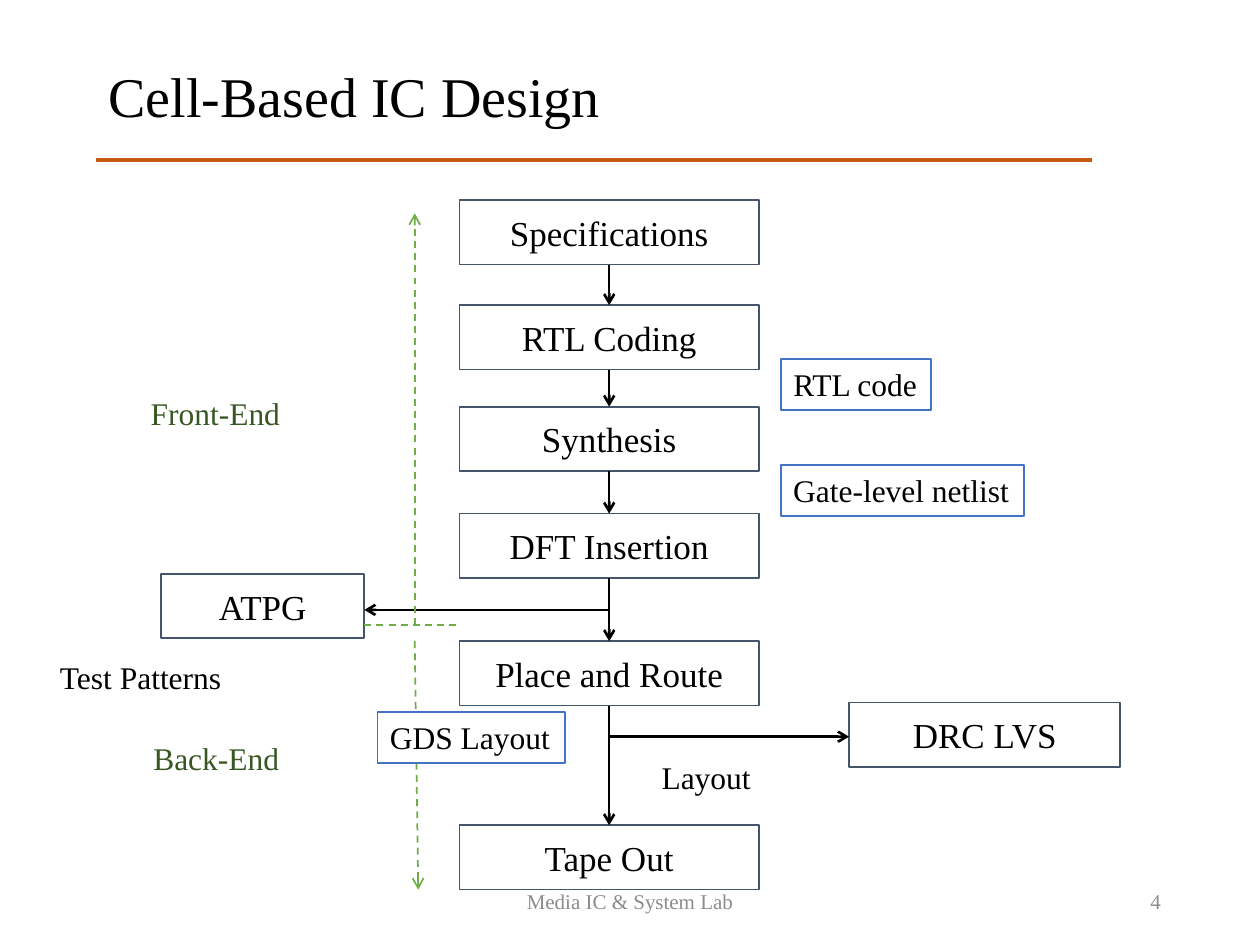
from dataclasses import dataclass

from lxml import etree
from pptx import Presentation
from pptx.dml.color import RGBColor
from pptx.enum import dml, shapes, text
from pptx.oxml import ns
from pptx.util import Pt


@dataclass(frozen=True)
class Theme:
    font: str = "Times New Roman"
    black: str = "000000"
    white: str = "FFFFFF"
    grey: str = "8C8C8C"
    slate: str = "44546A"
    blue: str = "4472C4"
    green: str = "70AD47"
    forest: str = "385723"
    rust: str = "C55A11"
    head: int = 32
    step: int = 20
    note: int = 18
    foot: int = 12


T = Theme()
LEFT, WIDTH, HIGH = 262.6, 171, 36.8
MID = LEFT + WIDTH / 2
STEPS = [
    ("Specifications", 114.4),
    ("RTL Coding", 174.4),
    ("Synthesis", 232.4),
    ("DFT Insertion", 293.5),
    ("Place and Route", 366.4),
    ("Tape Out", 471.6),
]
SIDES = [("ATPG", 92, 328, 116.2), ("DRC LVS", 485.2, 401.4, 155)]
FILES = [
    ("RTL code", 446.2, 205.2, 85.8),
    ("Gate-level netlist", 446.2, 265.8, 139),
    ("GDS Layout", 215.7, 407, 107),
]
LABELS = [
    ("Front-End", 79, 221.8, 89.2, T.forest),
    ("Back-End", 80.5, 419, 87, T.forest),
    ("Test Patterns", 27.2, 372.6, 108, T.black),
    ("Layout", 371, 429.8, 66, T.black),
]
ALIGN = text.PP_ALIGN
ANCHOR = text.MSO_ANCHOR


def rgb(code):
    return RGBColor.from_string(code)


def write(shape, words, size, color=T.black, align=ALIGN.LEFT,
          anchor=ANCHOR.TOP, wrap=False, grow=False):
    frame = shape.text_frame
    frame.word_wrap = wrap
    frame.vertical_anchor = anchor
    frame.auto_size = (text.MSO_AUTO_SIZE.SHAPE_TO_FIT_TEXT if grow
                       else text.MSO_AUTO_SIZE.NONE)
    para = frame.paragraphs[0]
    para.alignment = align
    run = para.add_run()
    run.text = words
    run.font.name = T.font
    run.font.size = Pt(size)
    run.font.color.rgb = rgb(color)


def add_title(slide, words):
    title = slide.shapes.title
    title.left, title.top = Pt(54.7), Pt(31.7)
    title.width, title.height = Pt(586.8), Pt(46)
    write(title, words, T.head, wrap=True, grow=True)


def add_box(slide, left, top, width, high, edge):
    box = slide.shapes.add_shape(shapes.MSO_SHAPE.RECTANGLE, Pt(left), Pt(top),
                                 Pt(width), Pt(high))
    box.shadow.inherit = False
    box.fill.solid()
    box.fill.fore_color.rgb = rgb(T.white)
    box.line.color.rgb = rgb(edge)
    box.line.width = Pt(1)
    return box


def add_step(slide, words, left, top, width):
    box = add_box(slide, left, top, width, HIGH, T.slate)
    write(box, words, T.step, align=ALIGN.CENTER, anchor=ANCHOR.MIDDLE)


def add_file(slide, words, left, top, width):
    box = add_box(slide, left, top, width, 29, T.blue)
    write(box, words, T.note, grow=True)


def add_label(slide, words, left, top, width, color):
    label = slide.shapes.add_textbox(Pt(left), Pt(top), Pt(width), Pt(29))
    write(label, words, T.note, color, grow=True)


def add_foot(slide, words, left, width, align):
    foot = slide.shapes.add_textbox(Pt(left), Pt(500.5), Pt(width), Pt(28.8))
    write(foot, words, T.foot, T.grey, align, ANCHOR.MIDDLE, wrap=True)


def add_line(slide, start, end, color=T.black, width=1.5, dash=False, arrow=True):
    link = slide.shapes.add_connector(shapes.MSO_CONNECTOR.STRAIGHT,
                                      *map(Pt, (*start, *end)))
    link.line.color.rgb = rgb(color)
    link.line.width = Pt(width)
    if dash:
        link.line.dash_style = dml.MSO_LINE.DASH
    if arrow:
        tail = etree.SubElement(link.line._get_or_add_ln(), ns.qn("a:tailEnd"))
        tail.set("type", "arrow")
    etree.SubElement(link._element.spPr, ns.qn("a:effectLst"))


def add_flow(slide):
    for words, top in STEPS:
        add_step(slide, words, LEFT, top, WIDTH)
    tops = [top for _, top in STEPS]
    for top, below in zip(tops, tops[1:]):
        add_line(slide, (MID, top + HIGH), (MID, below))
    for side in SIDES:
        add_step(slide, *side)
    add_line(slide, (MID, 348.5), (208.2, 348.5))
    add_line(slide, (MID, 421), (485.2, 421))


def add_phases(slide):
    add_line(slide, (237, 357), (237, 121.9), T.green, 1, dash=True)
    add_line(slide, (237, 366.4), (239, 508.4), T.green, 1, dash=True)
    add_line(slide, (208.2, 357), (LEFT, 357), T.green, 1, dash=True, arrow=False)


def main():
    deck = Presentation()
    deck.slide_width, deck.slide_height = Pt(720), Pt(540)
    slide = deck.slides.add_slide(deck.slide_layouts.get_by_name("Title Only"))
    add_foot(slide, "4", 508.5, 162, ALIGN.RIGHT)
    add_foot(slide, "Media IC & System Lab", 238.5, 243, ALIGN.CENTER)
    add_title(slide, "Cell-Based IC Design")
    add_line(slide, (54.9, 91.4), (624, 91.4), T.rust, 2.25, arrow=False)
    add_flow(slide)
    add_phases(slide)
    for label in LABELS:
        add_label(slide, *label)
    for item in FILES:
        add_file(slide, *item)
    deck.save("out.pptx")


if __name__ == "__main__":
    main()
